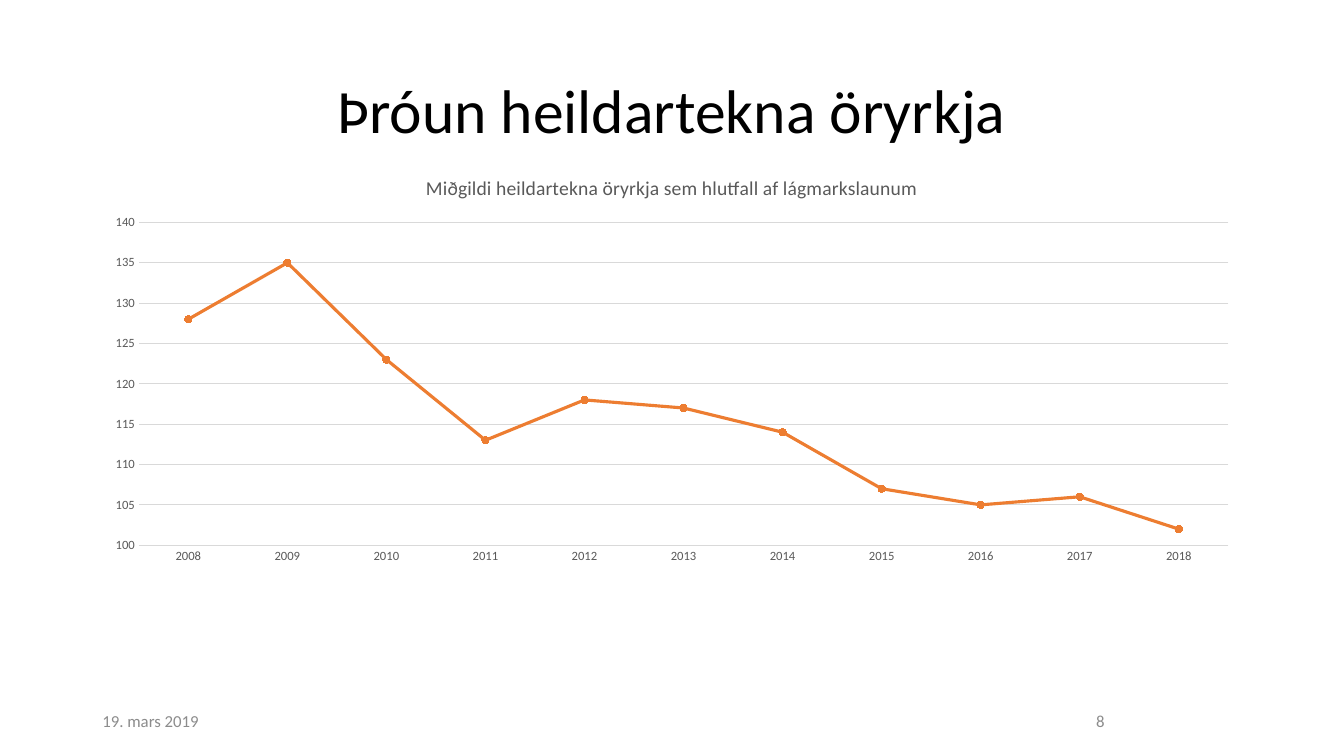
from pptx import Presentation
from pptx import util as u
from pptx.chart.data import CategoryChartData
from pptx.dml.color import RGBColor
from pptx.enum import chart as ch, text as tx

FONT = "Calibri"
BLACK, DARK, GREY, RULE, ORANGE = "000000", "595959", "8C8C8C", "D9D9D9", "ED7D31"
LEFT, WIDE = 2.33, 29.21
NAME = "Miðgildi heildartekna öryrkja sem hlutfall af lágmarkslaunum"
SHARES = [128, 135, 123, 113, 118, 117, 114, 107, 105, 106, 102]


def color(code):
    return RGBColor.from_string(code)


def style(font, size, code):
    font.name = FONT
    font.size = u.Pt(size)
    font.bold = False
    font.color.rgb = color(code)


def stroke(line, code, width):
    line.color.rgb = color(code)
    line.width = u.Pt(width)


def label(slide, box, words, size, code, align=tx.PP_ALIGN.LEFT, space=1.0):
    frame = slide.shapes.add_textbox(*map(u.Cm, box)).text_frame
    frame.word_wrap = True
    frame.vertical_anchor = tx.MSO_ANCHOR.MIDDLE
    para = frame.paragraphs[0]
    para.alignment = align
    para.line_spacing = space
    run = para.add_run()
    run.text = words
    style(run.font, size, code)


def footer(slide, box):
    left, top, width, height = box
    part = 7.62
    label(slide, (left, top, part, height), "19. mars 2019", 12, GREY)
    label(slide, (left + width - part, top, part, height), "8", 12, GREY,
          tx.PP_ALIGN.CENTER)


def trend(slide, box):
    """Line chart of yearly income shares."""
    data = CategoryChartData(number_format="#,##0")
    data.categories = [str(2008 + i) for i in range(len(SHARES))]
    data.add_series(NAME, SHARES)
    chart = slide.shapes.add_chart(
        ch.XL_CHART_TYPE.LINE_MARKERS, *map(u.Cm, box), data).chart
    style(chart.font, 10, BLACK)
    chart.has_legend = False
    chart.has_title = True
    run = chart.chart_title.text_frame.paragraphs[0].add_run()
    run.text = NAME
    style(run.font, 14, DARK)
    chart.chart_title.include_in_layout = False

    years, scale = chart.category_axis, chart.value_axis
    for axis in (years, scale):
        axis.major_tick_mark = axis.minor_tick_mark = ch.XL_TICK_MARK.NONE
        style(axis.tick_labels.font, 9, DARK)
    stroke(years.format.line, RULE, 0.75)
    scale.format.line.fill.background()
    scale.minimum_scale, scale.maximum_scale, scale.major_unit = 100, 140, 5
    scale.tick_labels.number_format = "#,##0"
    scale.tick_labels.number_format_is_linked = False
    stroke(scale.major_gridlines.format.line, RULE, 0.75)

    chart.plots[0].vary_by_categories = False
    series = chart.plots[0].series[0]
    series.smooth = False
    stroke(series.format.line, ORANGE, 2.25)
    mark = series.marker
    mark.style = ch.XL_MARKER_STYLE.CIRCLE
    mark.size = 5
    mark.format.fill.solid()
    mark.format.fill.fore_color.rgb = color(ORANGE)
    stroke(mark.format.line, ORANGE, 0.75)


def main():
    deck = Presentation()
    deck.slide_width, deck.slide_height = u.Cm(33.87), u.Cm(19.05)
    slide = deck.slides.add_slide(deck.slide_layouts[6])
    label(slide, (LEFT, 1.02, WIDE, 3.68), "Þróun heildartekna öryrkja", 44, BLACK,
          tx.PP_ALIGN.CENTER, 0.9)
    footer(slide, (LEFT, 17.65, WIDE, 1.02))
    trend(slide, (LEFT, 3.96, WIDE, 10.46))
    deck.save("out.pptx")


if __name__ == "__main__":
    main()
